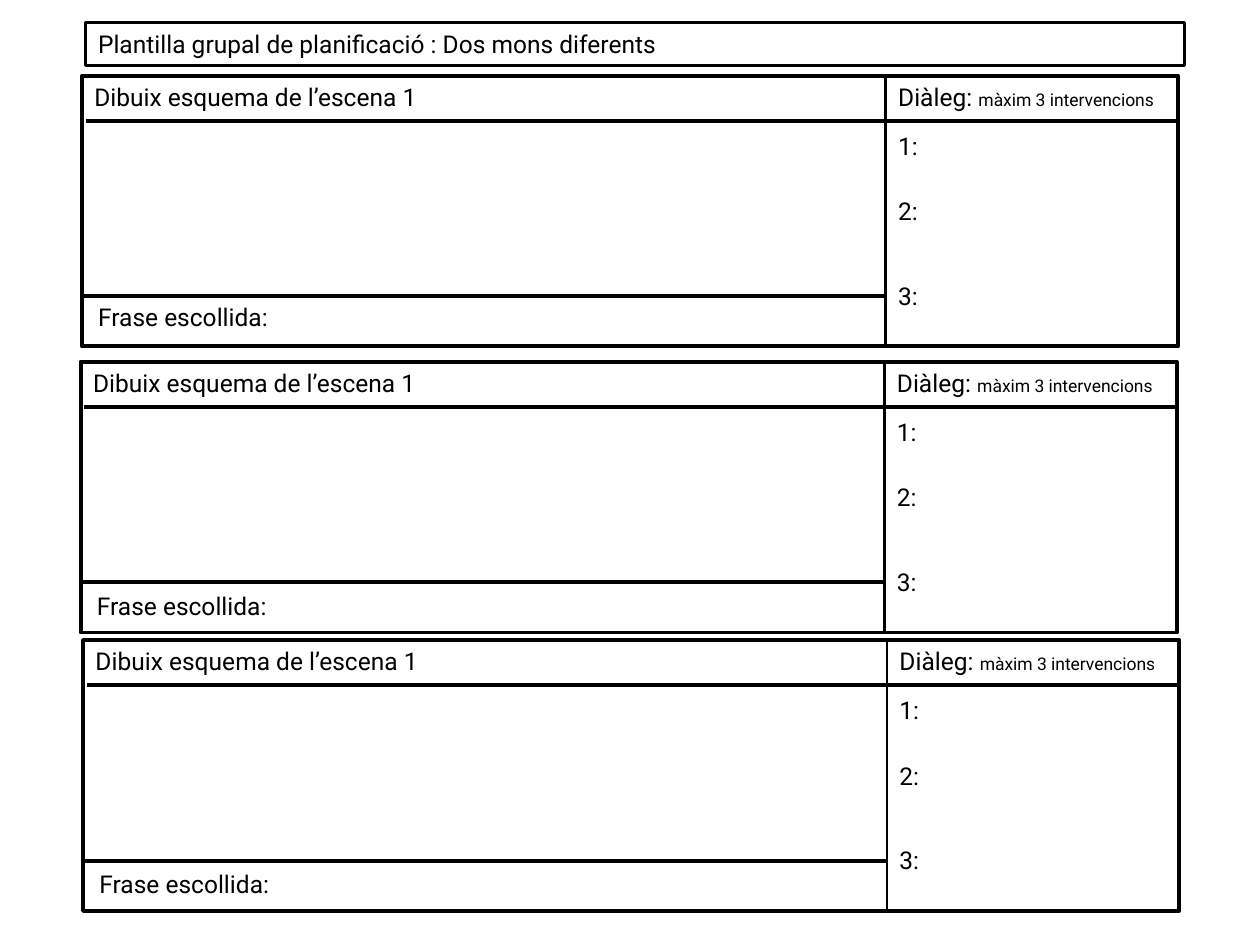
from dataclasses import dataclass

from lxml import etree
from pptx import Presentation
from pptx.dml.color import RGBColor
from pptx.enum.shapes import MSO_CONNECTOR, MSO_SHAPE
from pptx.enum.text import MSO_ANCHOR, PP_ALIGN
from pptx.oxml.ns import qn
from pptx.util import Inches, Pt

RECTANGLE = MSO_SHAPE.RECTANGLE
STRAIGHT = MSO_CONNECTOR.STRAIGHT
TOP = MSO_ANCHOR.TOP
LEFT = PP_ALIGN.LEFT


@dataclass(frozen=True)
class Theme:
    ink: RGBColor = RGBColor(0, 0, 0)
    font: str = "Roboto"
    body: float = 14
    small: float = 10
    thin: float = 1.5
    thick: float = 2.25
    row: float = 0.34


THEME = Theme()


def write(shape, *runs):
    """Fill a shape with one paragraph of (text, size) runs."""
    frame = shape.text_frame
    frame.word_wrap = True
    frame.vertical_anchor = TOP
    paragraph = frame.paragraphs[0]
    paragraph.alignment = LEFT
    for text, size in runs:
        run = paragraph.add_run()
        run.text = text
        run.font.name = THEME.font
        run.font.size = Pt(size)
        run.font.color.rgb = THEME.ink


def add_frame(shapes, left, top, width, height, weight, title):
    box = shapes.add_shape(RECTANGLE, Inches(left), Inches(top),
                           Inches(width), Inches(height))
    box.shadow.inherit = False
    box.fill.background()
    box.line.color.rgb = THEME.ink
    box.line.width = Pt(weight)
    write(box, (title, THEME.body))


def add_label(shapes, left, top, width, *runs):
    label = shapes.add_textbox(Inches(left), Inches(top),
                               Inches(width), Inches(THEME.row))
    write(label, *runs)


def add_rule(shapes, x1, y1, x2, y2, weight):
    rule = shapes.add_connector(STRAIGHT, Inches(x1), Inches(y1),
                                Inches(x2), Inches(y2))
    rule.line.color.rgb = THEME.ink
    rule.line.width = Pt(weight)
    etree.SubElement(rule._element.spPr, qn("a:effectLst"))


def add_scene(slide, left, top, width, height, phrase_gap):
    """Scene panel: drawing area, chosen phrase and dialogue column."""
    shapes = slide.shapes.add_group_shape().shapes
    divider = left + 6.38
    indent = left + 0.03
    header_bottom = top + 0.36
    phrase_top = top + 1.75

    # Dialogue column
    add_rule(shapes, divider, top, divider, top + height, THEME.thin)
    add_label(shapes, divider, top, 2.32,
              ("Diàleg: ", THEME.body), ("màxim 3 intervencions", THEME.small))
    for number, offset in enumerate((0.39, 0.91, 1.58), start=1):
        add_label(shapes, divider, top + offset, 0.47, (f"{number}:", THEME.body))

    # Drawing area and its header
    add_frame(shapes, left, top, width, height, THEME.thick,
              "Dibuix esquema de l’escena 1")
    add_rule(shapes, indent, header_bottom, indent + 8.68, header_bottom, THEME.thick)

    # Chosen phrase
    add_rule(shapes, left, phrase_top, divider, phrase_top, THEME.thick)
    add_label(shapes, indent, phrase_top + phrase_gap, 1.57,
              ("Frase escollida:", THEME.body))


def main():
    presentation = Presentation()
    presentation.slide_width = Inches(10)
    presentation.slide_height = Inches(7.5)
    slide = presentation.slides.add_slide(presentation.slide_layouts[6])

    # Title bar
    add_frame(slide.shapes, 0.68, 0.18, 8.72, THEME.row, THEME.thin,
              "Plantilla grupal de planificació : Dos mons diferents")

    # Three scene panels
    for left, top, phrase_gap in ((0.65, 0.6, 0), (0.64, 2.87, 0.02), (0.66, 5.08, 0.02)):
        add_scene(slide, left, top, 8.7, 2.15, phrase_gap)

    presentation.save("out.pptx")


if __name__ == "__main__":
    main()
